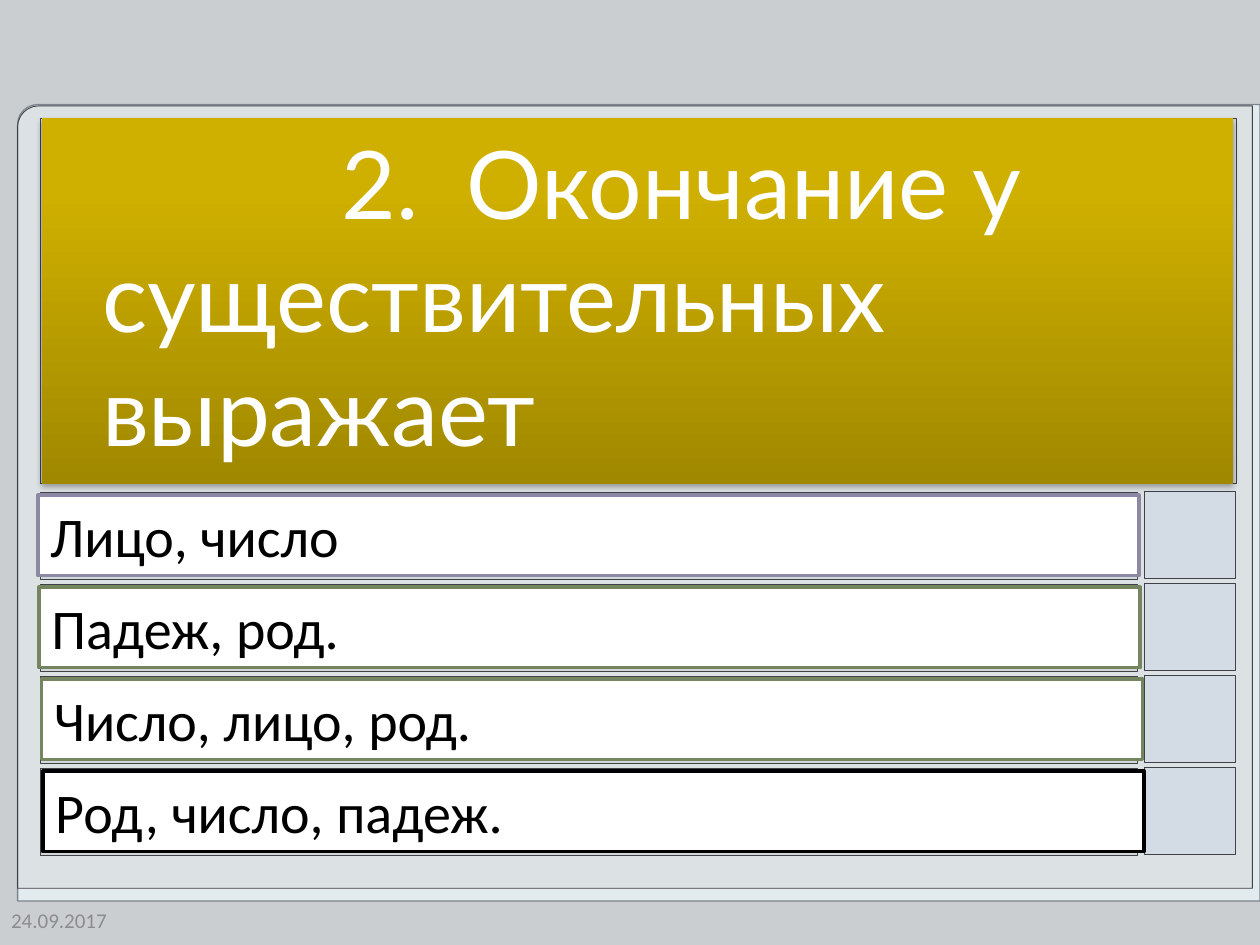
import copy

import pptx
import pptx.dml.color
import pptx.enum.shapes
import pptx.enum.text
import pptx.oxml
import pptx.oxml.ns
import pptx.util

Inches = pptx.util.Inches
Pt = pptx.util.Pt
qn = pptx.oxml.ns.qn
SHAPE = pptx.enum.shapes.MSO_SHAPE
ANCHOR = pptx.enum.text.MSO_ANCHOR

SHADOW = (
    f'<a:effectLst {pptx.oxml.ns.nsdecls("a")}>'
    '<a:outerShdw blurRad="39370" dist="22860" dir="5400000" rotWithShape="0">'
    '<a:srgbClr val="000000"><a:alpha val="35000"/></a:srgbClr>'
    "</a:outerShdw></a:effectLst>"
)


def rgb(value):
    return pptx.dml.color.RGBColor.from_string(value)


class QuizSlide:
    question_font = {"name": "Lato", "size": Pt(54)}
    answer_font = {"name": "Calibri", "size": Pt(32)}
    date_font = {"name": "Calibri", "size": Pt(12)}
    outline = "3F4247"

    def __init__(self, prs, background):
        self.s = prs.slides.add_slide(prs.slide_layouts[5])
        fill = self.s.background.fill
        fill.solid()
        fill.fore_color.rgb = rgb(background)

    def place(self, sp, box):
        for name, value in zip(("left", "top", "width", "height"), box):
            setattr(sp, name, Inches(value))

    def add_text(self, sp, text, font, color, anchor=ANCHOR.TOP):
        tf = sp.text_frame
        frame = {
            "word_wrap": True,
            "auto_size": pptx.enum.text.MSO_AUTO_SIZE.NONE,
            "vertical_anchor": anchor,
        }
        for name, value in frame.items():
            setattr(tf, name, value)
        p = tf.paragraphs[0]
        p.alignment = pptx.enum.text.PP_ALIGN.LEFT
        r = p.add_run()
        r.text = text
        for name, value in font.items():
            setattr(r.font, name, value)
        r.font.color.rgb = rgb(color)
        return p

    def panel(self, box, fill, line=outline, width=0.5, kind=SHAPE.RECTANGLE,
              alpha=None, rotation=0, flip=False, adjustments=()):
        sp = self.s.shapes.add_shape(kind, *map(Inches, box))
        sp.shadow.inherit = False
        sp.rotation = rotation
        sp.fill.solid()
        sp.fill.fore_color.rgb = rgb(fill)
        sp.line.color.rgb = rgb(line)
        sp.line.width = Pt(width)
        for i, value in enumerate(adjustments):
            sp.adjustments[i] = value
        spPr = sp._element.spPr
        if flip:
            spPr.xfrm.set("flipH", "1")
        if alpha is not None:
            color = spPr.find(qn("a:solidFill")).find(qn("a:srgbClr"))
            color.append(color.makeelement(qn("a:alpha"), {"val": str(alpha * 1000)}))
        return sp

    def question(self, box, text):
        sp = self.s.shapes.title
        self.place(sp, box)
        sp.fill.gradient()
        sp.fill.gradient_angle = 90
        stops = sp._element.spPr.find(".//" + qn("a:gsLst"))
        stops.append(copy.deepcopy(stops[-1]))
        colors = ((0, "A08800"), (0.8, "CFB000"), (1, "D0B100"))
        for stop, (position, color) in zip(sp.fill.gradient_stops, colors):
            stop.position = position
            stop.color.rgb = rgb(color)
        sp._element.spPr.append(pptx.oxml.parse_xml(SHADOW))
        p = self.add_text(sp, text, self.question_font, "FFFFFF")
        pPr = p._p.get_or_add_pPr()
        pPr.set("marL", str(Inches(0.38)))
        pPr.set("indent", str(Inches(1.9)))
        self.s.shapes._spTree.append(sp._element)

    def answer(self, box, text, line):
        sp = self.panel(box, "FFFFFF", line, 2)
        self.add_text(sp, text, self.answer_font, "000000")

    def date(self, box, text):
        sp = self.s.shapes.add_textbox(*map(Inches, box))
        self.add_text(sp, text, self.date_font, "8C8C8C", ANCHOR.MIDDLE)


def main():
    prs = pptx.Presentation()
    prs.slide_width = Inches(10)
    prs.slide_height = Inches(7.5)
    quiz = QuizSlide(prs, "CBCED1")

    quiz.panel((1.91, -0.94, 6.32, 9.86), "E2ECEF", "7E848D", 0.75,
               SHAPE.SNIP_ROUND_RECTANGLE, rotation=270, flip=True,
               adjustments=(0.025, 0))
    quiz.panel((0.14, 0.84, 9.8, 6.21), "D8D8D8", kind=SHAPE.ROUND_1_RECTANGLE,
               alpha=50, flip=True, adjustments=(0.027,))
    quiz.panel((0.32, 0.94, 9.49, 2.9), "CBCED1", kind=SHAPE.ROUND_1_RECTANGLE,
               alpha=50, flip=True, adjustments=(0,))

    answers = (
        (0.3, "Лицо, число", "8D89A4"),
        (0.31, "Падеж, род.", "748560"),
        (0.33, "Число, лицо, род.", "748560"),
        (0.34, "Род, число, падеж.", "000000"),
    )
    pitch = 0.73
    for i in range(len(answers)):
        quiz.panel((0.32, 3.91 + i * pitch, 8.71, 0.69), "CBCED1", alpha=50)
        quiz.panel((9.1, 3.88 + i * pitch, 0.69, 0.73), "CCD8E7", alpha=50,
                   rotation=270)

    quiz.date((-0.01, 7.1, 1.17, 0.4), "24.09.2017")
    quiz.question((0.33, 0.94, 9.46, 2.9),
                  "2.  Окончание у существительных выражает")
    for i, (left, text, line) in enumerate(answers):
        quiz.answer((left, 3.93 + i * pitch, 8.74, 0.64), text, line)

    prs.save("out.pptx")


if __name__ == "__main__":
    main()
